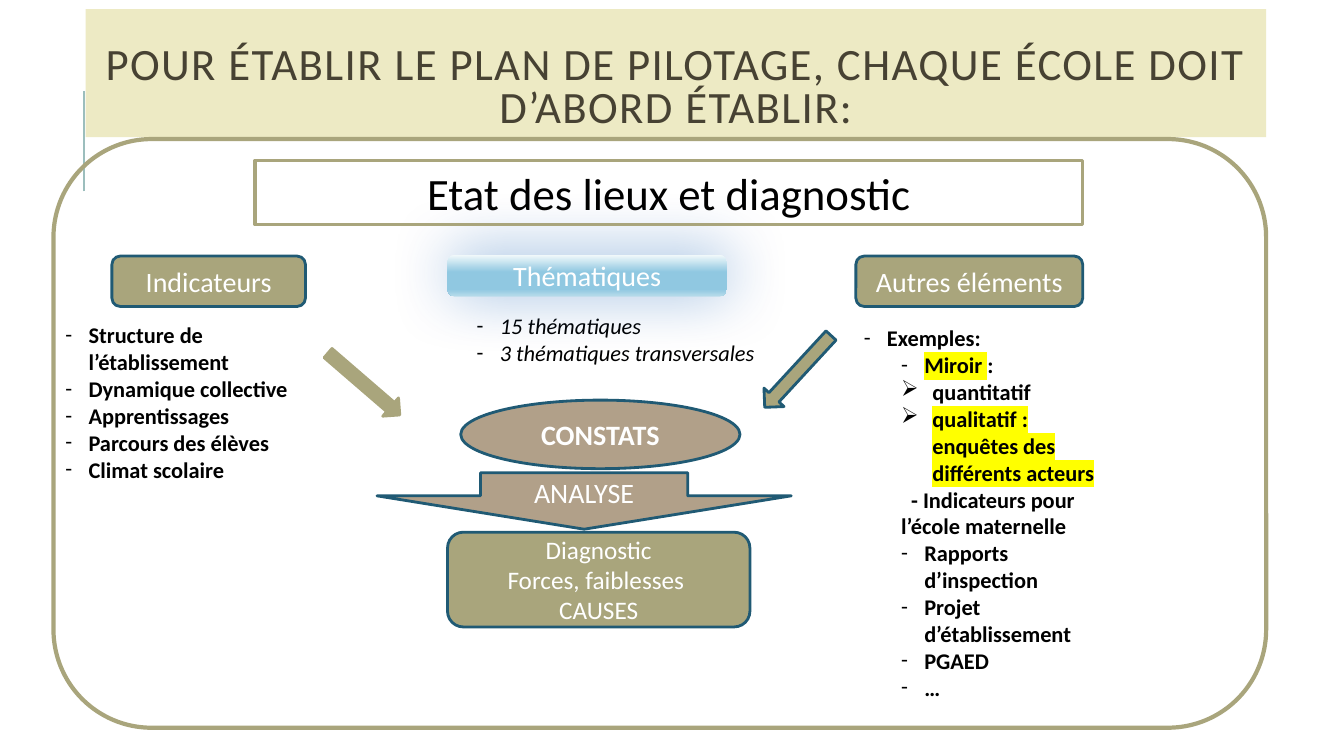
"""Build the slide on the school review and diagnosis behind the steering plan."""
import dataclasses
import typing

import lxml.etree
import pptx
import pptx.dml.color
import pptx.enum.shapes
import pptx.enum.text
import pptx.oxml.ns
import pptx.util

Pt = pptx.util.Pt
Inches = pptx.util.Inches
qn = pptx.oxml.ns.qn
RGB = pptx.dml.color.RGBColor.from_string
Shape = pptx.enum.shapes.MSO_SHAPE
Anchor = pptx.enum.text.MSO_ANCHOR
Align = pptx.enum.text.PP_ALIGN
AutoSize = pptx.enum.text.MSO_AUTO_SIZE
WIDTH, HEIGHT = Inches(13.33), Inches(7.5)


@dataclasses.dataclass(frozen=True)
class Theme:
    font: str = "Calibri"
    symbols: str = "Wingdings"
    black: str = "000000"
    white: str = "FFFFFF"
    title: str = "474233"
    cream: str = "EDEAC4"
    olive: str = "A9A57C"
    taupe: str = "B1A089"
    navy: str = "205A74"
    rule: str = "9CBEBD"
    marker: str = "FFFF00"
    glow: str = "0354B0"
    sky: tuple = ((0, "F2F9FB"), (41, "90C8E1"), (83, "90C8E1"), (100, "B6DBEA"))
    big: int = 32
    label: int = 20
    result: int = 18
    body: int = 16


T = Theme()


class Box(typing.NamedTuple):
    """Left, top, width and height in percent of the slide."""
    x: float
    y: float
    w: float
    h: float

    def emu(self) -> list[int]:
        return [round(v * side / 100) for v, side in zip(self, (WIDTH, HEIGHT) * 2)]


@dataclasses.dataclass(frozen=True)
class Block:
    box: Box
    kind: Shape = Shape.ROUNDED_RECTANGLE
    text: str = ""
    fill: str | None = T.olive
    line: str | None = T.navy
    weight: float = 2
    size: int = T.label
    color: str = T.white
    bold: bool = False
    anchor: Anchor = Anchor.MIDDLE
    rotation: float = 0
    head: float | None = None
    glow: bool = False


@dataclasses.dataclass(frozen=True)
class Item:
    text: str
    left: float = 0.23
    hang: float = -0.23
    bullet: str = "-"
    bullet_font: str = T.font
    level: int = 0
    marked: bool = False
    tail: str = ""


@dataclasses.dataclass(frozen=True)
class Listing:
    box: Box
    items: list[Item]
    bold: bool = True
    italic: bool = False


def sub(parent: typing.Any, tag: str, **attrs: typing.Any) -> typing.Any:
    return lxml.etree.SubElement(parent, qn(tag), {k: str(v) for k, v in attrs.items()})


def style(r: typing.Any, size: int, color: str, bold: bool = False, italic: bool = False) -> None:
    r.font.name, r.font.size = T.font, Pt(size)
    r.font.bold, r.font.italic = bold, italic
    r.font.color.rgb = RGB(color)


def add_glow(sp: typing.Any) -> None:
    sp.fill.gradient()
    sp.fill.gradient_angle = 270
    stops = sp._element.spPr.find(".//" + qn("a:gsLst"))
    for old in list(stops):
        stops.remove(old)
    for pos, color in T.sky:
        sub(sub(stops, "a:gs", pos=pos * 1000), "a:srgbClr", val=color)
    effects = sp._element.spPr.find(qn("a:effectLst"))
    shadow = sub(effects, "a:outerShdw", blurRad=Pt(45), dist=Pt(3), dir=315 * 60000, rotWithShape=0)
    sub(sub(shadow, "a:srgbClr", val=T.glow), "a:alpha", val=40000)


def add_block(s: typing.Any, b: Block) -> typing.Any:
    sp = s.shapes.add_shape(b.kind, *b.box.emu())
    sp.shadow.inherit = False
    sp.rotation = b.rotation
    if b.head is not None:
        sp.adjustments[1] = b.head
    if b.glow:
        add_glow(sp)
    elif b.fill:
        sp.fill.solid()
        sp.fill.fore_color.rgb = RGB(b.fill)
    else:
        sp.fill.background()
    if b.line:
        sp.line.color.rgb, sp.line.width = RGB(b.line), Pt(b.weight)
    else:
        sp.line.fill.background()
    if b.text:
        tf = sp.text_frame
        tf.text = b.text
        tf.word_wrap, tf.vertical_anchor = True, b.anchor
        for p in tf.paragraphs:
            p.alignment = Align.CENTER
            for r in p.runs:
                style(r, b.size, b.color, b.bold)
    return sp


def add_listing(s: typing.Any, listing: Listing) -> None:
    tf = s.shapes.add_textbox(*listing.box.emu()).text_frame
    tf.word_wrap, tf.auto_size = True, AutoSize.SHAPE_TO_FIT_TEXT
    for i, item in enumerate(listing.items):
        p = tf.add_paragraph() if i else tf.paragraphs[0]
        p.text, p.level = item.text, item.level
        if item.tail:
            p.add_run().text = item.tail
        for r in p.runs:
            style(r, T.body, T.black, listing.bold, listing.italic)
        if item.marked:
            fill = p.runs[0].font._element.find(qn("a:solidFill"))
            mark = fill.makeelement(qn("a:highlight"))
            sub(mark, "a:srgbClr", val=T.marker)
            fill.addnext(mark)
        pPr = p._p.get_or_add_pPr()
        pPr.set("marL", str(Inches(item.left)))
        pPr.set("indent", str(Inches(item.hang)))
        if item.bullet:
            sub(sub(pPr, "a:buClr"), "a:srgbClr", val=T.black)
            sub(pPr, "a:buFont", typeface=item.bullet_font)
            sub(pPr, "a:buChar", char=item.bullet)
        else:
            sub(pPr, "a:buNone")


def add_title(s: typing.Any) -> None:
    sp = add_block(s, Block(
        Box(6.38, 1.2, 87.83, 16.93), Shape.RECTANGLE,
        "POUR ÉTABLIR LE PLAN DE PILOTAGE, CHAQUE ÉCOLE DOIT D’ABORD ÉTABLIR:",
        fill=T.cream, line=None, size=T.big, color=T.title, anchor=Anchor.BOTTOM))
    p = sp.text_frame.paragraphs[0]
    p.line_spacing = 0.8
    p.runs[0].font._element.set("spc", "100")


def add_rule(s: typing.Any) -> None:
    x, top, _, height = Box(6.25, 12, 0, 13.33).emu()
    line = s.shapes.add_connector(pptx.enum.shapes.MSO_CONNECTOR.STRAIGHT, x, top + height, x, top)
    line.line.color.rgb, line.line.width = RGB(T.rule), Pt(1.5)
    sub(line._element.spPr, "a:effectLst")


def nested(text: str, **changes: typing.Any) -> Item:
    return Item(text, **{"left": 0.6, "level": 1, **changes})


ARROW = {"left": 0.68, "hang": -0.31, "bullet": "Ø", "bullet_font": T.symbols}
CENTRE = [
    Block(Box(28.05, 62.53, 30.83, 7.47), Shape.DOWN_ARROW, "ANALYSE", T.taupe, head=0.591),
    Block(Box(34.28, 52.93, 20.78, 9.07), Shape.OVAL, "CONSTATS", T.taupe, bold=True),
]
LISTINGS = [
    Listing(Box(4.13, 41.87, 20.78, 22.93), [Item(t) for t in (
        "Structure de l’établissement", "Dynamique collective", "Apprentissages",
        "Parcours des élèves", "Climat scolaire")]),
    Listing(Box(34.73, 40.67, 25.28, 8.53),
            [Item("15 thématiques"), Item("3 thématiques transversales")], bold=False, italic=True),
    Listing(Box(63.53, 42.27, 19.65, 51.6), [
        Item("Exemples:"),
        nested("Miroir ", marked=True, tail=":"),
        nested("quantitatif", **ARROW),
        nested("qualitatif : enquêtes des différents acteurs", marked=True, **ARROW),
        nested("- Indicateurs pour l’école maternelle", left=0.37, hang=0.1, bullet=""),
        *map(nested, ("Rapports d’inspection", "Projet d’établissement", "PGAED", "…"))]),
]
FRONT = [
    Block(Box(3.98, 18.4, 90.23, 77.87), fill=None, line=T.olive, weight=3),
    Block(Box(8.33, 33.87, 14.4, 6.67), text="Indicateurs"),
    Block(Box(33.3, 33.73, 20.78, 5.47), text="Thématiques", line=None, glow=True),
    Block(Box(63.68, 33.87, 16.88, 6.67), text="Autres éléments"),
    Block(Box(33.3, 70.4, 22.5, 12.53), text="Diagnostic\nForces, faiblesses \nCAUSES", size=T.result),
    Block(Box(58.35, 42.67, 2.03, 12.93), Shape.DOWN_ARROW, rotation=42.7),
    Block(Box(26.18, 44.53, 1.8, 12.53), Shape.DOWN_ARROW, line=T.olive, rotation=310.8),
    Block(Box(18.98, 21.2, 61.58, 8.53), Shape.RECTANGLE, "Etat des lieux et diagnostic", None,
          T.olive, 2.25, T.big, T.black, anchor=Anchor.TOP),
]


def main() -> None:
    prs = pptx.Presentation()
    prs.slide_width, prs.slide_height = WIDTH, HEIGHT
    s = prs.slides.add_slide(prs.slide_layouts[6])
    add_rule(s)
    add_title(s)
    for b in CENTRE:
        add_block(s, b)
    for listing in LISTINGS:
        add_listing(s, listing)
    for b in FRONT:
        add_block(s, b)
    prs.save("out.pptx")


if __name__ == "__main__":
    main()
